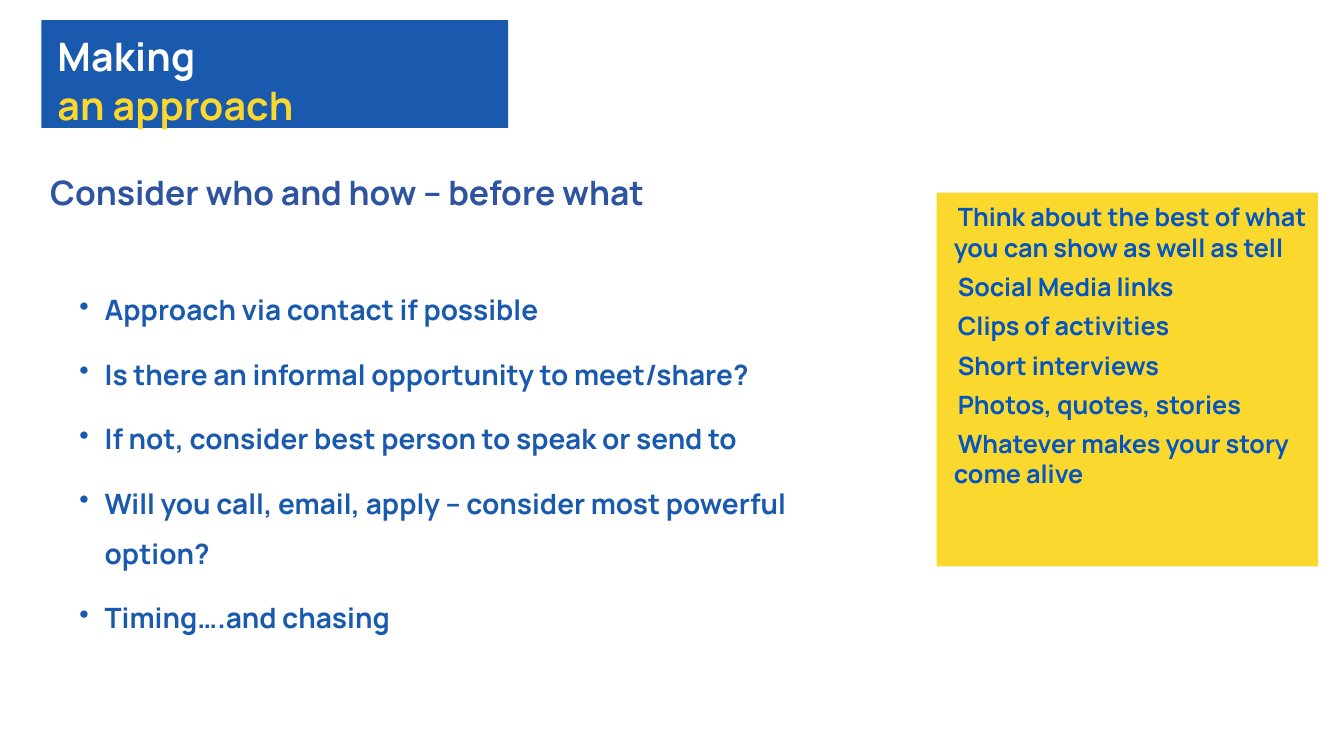
from pptx import Presentation
from pptx.dml.color import RGBColor
from pptx.enum.shapes import MSO_SHAPE
from pptx.enum.text import MSO_ANCHOR, PP_ALIGN
from pptx.oxml.xmlchemy import OxmlElement
from pptx.util import Inches, Pt

RECT = MSO_SHAPE.RECTANGLE
TOP = MSO_ANCHOR.TOP
LEFT = PP_ALIGN.LEFT

FONT = "Manrope"
COLORS = {"blue": "1959AE", "heading": "2E54A0", "bright": "0455BF",
          "yellow": "FBD82E", "white": "FFFFFF"}

# text, colour, letter spacing in hundredths of a point
TITLE = [("Making ", "white", 20), ("an approach", "yellow", 10)]
HEADING = ["Consider who and how – before what"]
STEPS = [
    "Approach via contact if possible",
    "Is there an informal opportunity to meet/share?",
    "If not, consider best person to speak or send to",
    "Will you call, email, apply – consider most powerful option?",
    "Timing….and chasing",
]
TIPS = [
    "Think about the best of what you can show as well as tell",
    "Social Media links",
    "Clips of activities",
    "Short interviews",
    "Photos, quotes, stories",
    "Whatever makes your story come alive",
]

# left, top, width, height in inches
TITLE_BOX = (0.41, 0.2, 4.63, 1.07)
HEADING_BOX = (0.4, 1.66, 8.07, 0.5)
STEPS_BOX = (0.69, 2.69, 8.16, 3.92)
TIPS_BOX = (9.29, 1.91, 3.78, 3.71)


def rgb(name):
    return RGBColor.from_string(COLORS[name])


def add_box(s, box, fill=None, inset_top=0.0):
    """Add a text box, or a filled rectangle without side insets; return its text frame."""
    place = [Inches(v) for v in box]
    if fill:
        sp = s.shapes.add_shape(RECT, *place)
        sp.shadow.inherit = False
        sp.fill.solid()
        sp.fill.fore_color.rgb = rgb(fill)
        sp.line.fill.background()
    else:
        sp = s.shapes.add_textbox(*place)
    tf = sp.text_frame
    tf.word_wrap = True
    tf.vertical_anchor = TOP
    if fill:
        tf.margin_left = tf.margin_right = tf.margin_bottom = 0
        tf.margin_top = Inches(inset_top)
    return tf


def style(p, size, color, margin=0.0, indent=0.0, before=0, spacing=None, bullet=None):
    p.alignment = LEFT
    p.space_before = Pt(before)
    if spacing:
        p.line_spacing = spacing
    p.font.name, p.font.size, p.font.bold = FONT, Pt(size), True
    p.font.color.rgb = rgb(color)
    pPr = p._p.get_or_add_pPr()
    pPr.set("marL", str(Inches(margin)))
    pPr.set("indent", str(Inches(indent)))
    if bullet:
        mark = OxmlElement("a:buChar")
        mark.set("char", bullet)
        pPr.insert_element_before(mark, "a:tabLst", "a:defRPr", "a:extLst")


def write(tf, lines, **look):
    for i, line in enumerate(lines):
        p = tf.paragraphs[0] if i == 0 else tf.add_paragraph()
        p.text = line
        style(p, **look)


def write_title(tf):
    p = tf.paragraphs[0]
    style(p, 28, "white", margin=0.16, before=7.2, spacing=Pt(35))
    for i, (text, color, tracking) in enumerate(TITLE):
        if i:
            p.add_line_break()
        r = p.add_run()
        r.text = text
        r.font.color.rgb = rgb(color)
        r.font._element.set("spc", str(tracking))


def main():
    prs = Presentation()
    prs.slide_width, prs.slide_height = Inches(13.33), Inches(7.5)
    s = prs.slides.add_slide(prs.slide_layouts[6])

    write(add_box(s, STEPS_BOX), STEPS, size=20, color="blue",
          margin=0.25, indent=-0.25, before=10, spacing=1.5, bullet="•")
    write(add_box(s, HEADING_BOX), HEADING, size=24, color="heading")
    write(add_box(s, TIPS_BOX, "yellow", 0.09), TIPS, size=18, color="bright",
          margin=0.17, indent=0.04, before=6.5)
    write_title(add_box(s, TITLE_BOX, "blue", 0.1))

    prs.save("out.pptx")


if __name__ == "__main__":
    main()
